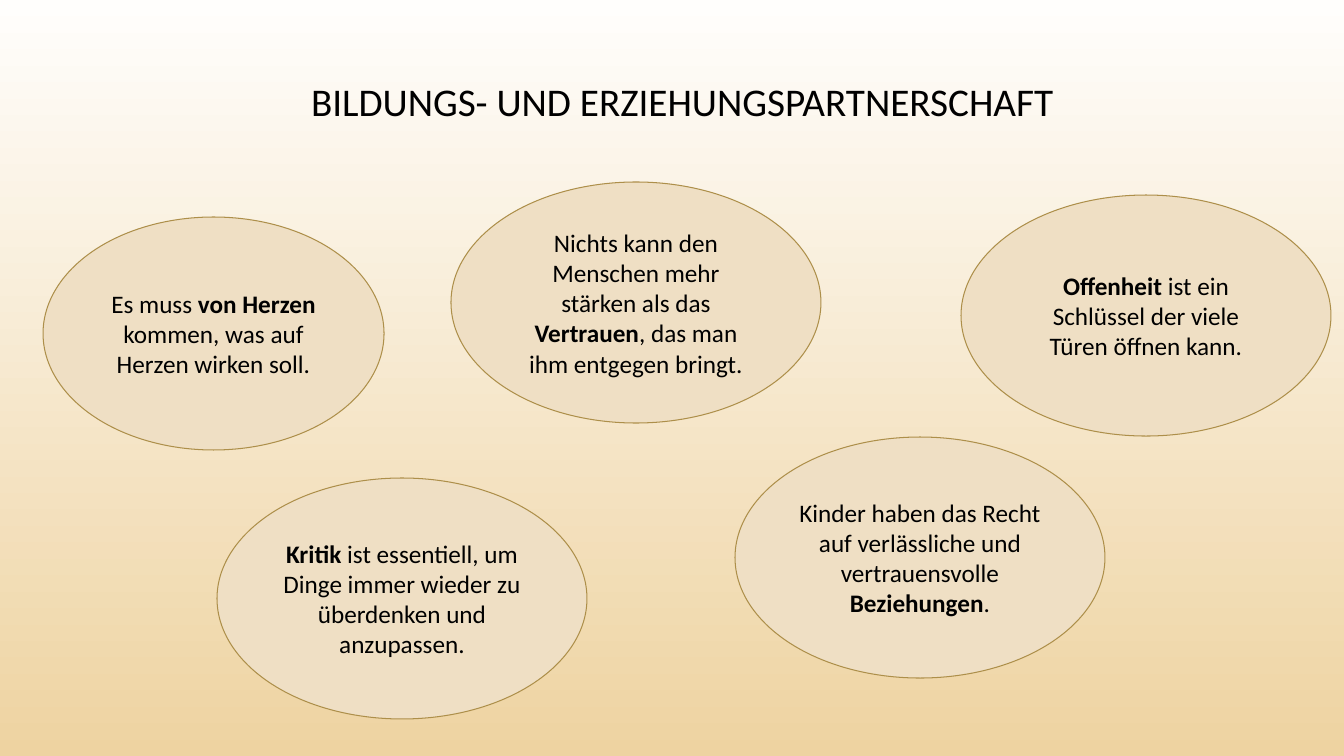
from dataclasses import dataclass

from pptx import Presentation
from pptx.dml.color import RGBColor
from pptx.enum.shapes import MSO_SHAPE
from pptx.enum.text import MSO_ANCHOR, PP_ALIGN
from pptx.slide import Slide
from pptx.util import Emu, Pt

PX_PER_INCH = 100.8
FONT = "Calibri"


@dataclass
class Bubble:
    x: int
    y: int
    before: str
    bold: str
    after: str
    w: int = 370
    h: int = 241


BUBBLES = [
    Bubble(43, 217, "Es muss ", "von Herzen ",
           "kommen, was auf Herzen wirken soll.", 341, 233),
    Bubble(217, 478, "", "Kritik ",
           "ist essentiell, um Dinge immer wieder zu überdenken und anzupassen."),
    Bubble(961, 195, "", "Offenheit",
           " ist ein Schlüssel der viele Türen öffnen kann."),
    Bubble(451, 182, "Nichts kann den Menschen mehr stärken als das ",
           "Vertrauen", ", das man ihm entgegen bringt."),
    Bubble(735, 437,
           "Kinder haben das Recht auf verlässliche und vertrauensvolle ",
           "Beziehungen", "."),
]


def px(n: int) -> Emu:
    return Emu(round(n * 914400 / PX_PER_INCH))


def color(value: str) -> RGBColor:
    return RGBColor.from_string(value)


def style_paragraph(p, size: int) -> None:
    p.alignment = PP_ALIGN.CENTER
    p.font.name = FONT
    p.font.size = Pt(size)
    p.font.color.rgb = color("000000")


def set_background(s: Slide) -> None:
    fill = s.background.fill
    fill.gradient()
    fill.gradient_angle = 270
    for stop, value in zip(fill.gradient_stops, ("FFFEFC", "EED3A1")):
        stop.color.rgb = color(value)


def set_title(s: Slide, text: str) -> None:
    sp = s.shapes.title
    sp.left, sp.top, sp.width, sp.height = px(111), px(47), px(1142), px(114)
    tf = sp.text_frame
    tf.text = text
    tf.vertical_anchor = MSO_ANCHOR.MIDDLE
    p = tf.paragraphs[0]
    p.line_spacing = 0.9
    style_paragraph(p, 28)


def add_bubble(s: Slide, b: Bubble) -> None:
    sp = s.shapes.add_shape(MSO_SHAPE.OVAL, px(b.x), px(b.y), px(b.w), px(b.h))
    sp.shadow.inherit = False
    sp.fill.solid()
    sp.fill.fore_color.rgb = color("EFDFC4")
    sp.line.color.rgb = color("AD8F4A")
    sp.line.width = Pt(0.75)
    tf = sp.text_frame
    tf.word_wrap = True
    tf.vertical_anchor = MSO_ANCHOR.MIDDLE
    p = tf.paragraphs[0]
    style_paragraph(p, 18)
    for text, bold in ((b.before, False), (b.bold, True), (b.after, False)):
        if text:
            r = p.add_run()
            r.text = text
            r.font.bold = bold


def main() -> None:
    prs = Presentation()
    prs.slide_width, prs.slide_height = px(1344), px(756)
    s = prs.slides.add_slide(prs.slide_layouts[5])

    # Background and title
    set_background(s)
    set_title(s, "BILDUNGS- UND ERZIEHUNGSPARTNERSCHAFT")

    # Statements in ovals
    for bubble in BUBBLES:
        add_bubble(s, bubble)

    prs.save("out.pptx")


if __name__ == "__main__":
    main()
